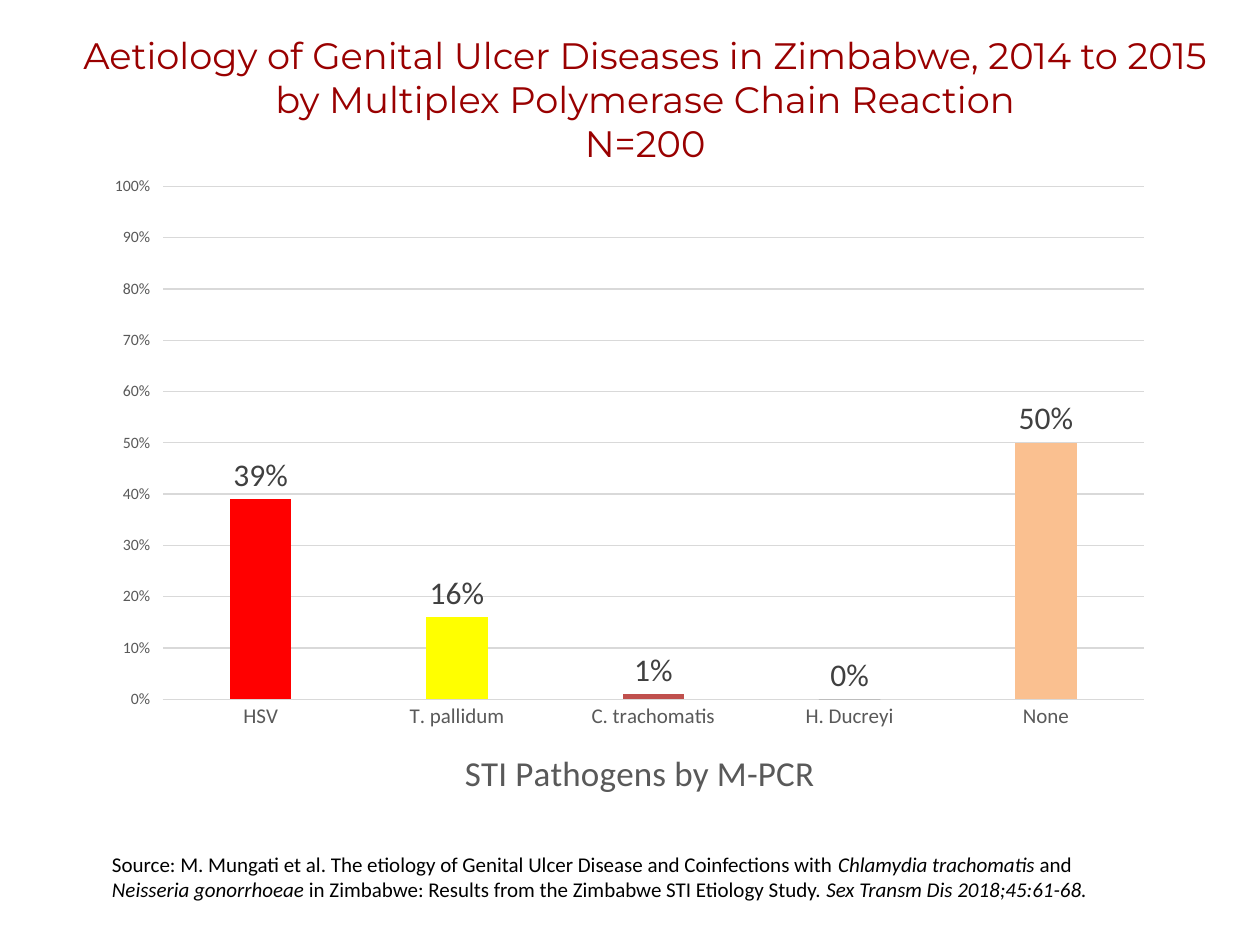
from dataclasses import dataclass

from lxml.etree import SubElement
from pptx import Presentation
from pptx.chart.data import CategoryChartData
from pptx.dml.color import RGBColor
from pptx.enum.chart import XL_CHART_TYPE, XL_LABEL_POSITION, XL_TICK_MARK
from pptx.enum.text import MSO_AUTO_SIZE, PP_ALIGN
from pptx.oxml.ns import qn
from pptx.util import Inches, Pt

BLACK = RGBColor(0x00, 0x00, 0x00)
MAROON = RGBColor(0x99, 0x00, 0x00)
AXIS_GREY = RGBColor(0x59, 0x59, 0x59)
LABEL_GREY = RGBColor(0x40, 0x40, 0x40)
GRID_GREY = RGBColor(0xD9, 0xD9, 0xD9)
RED = RGBColor(0xFF, 0x00, 0x00)
YELLOW = RGBColor(0xFF, 0xFF, 0x00)
BRICK = RGBColor(0xC0, 0x50, 0x4D)
PEACH = RGBColor(0xFA, 0xC0, 0x90)

BODY_FONT = "Calibri"
TITLE_FONT = "Montserrat"


@dataclass(frozen=True)
class Box:
    left: float
    top: float
    width: float
    height: float

    def lengths(self) -> tuple:
        return tuple(Inches(n) for n in (self.left, self.top, self.width, self.height))


@dataclass(frozen=True)
class TextRun:
    text: str
    italic: bool = False


@dataclass(frozen=True)
class Pathogen:
    name: str
    share: float
    color: RGBColor


TITLE_BOX = Box(0.45, 0.21, 9.34, 1.16)
CHART_BOX = Box(0.75, 1.31, 8.5, 5.2)
SOURCE_BOX = Box(0.79, 6.71, 8.38, 0.5)

TITLE = [
    [TextRun("Aetiology of Genital Ulcer Diseases in Zimbabwe, 2014 to 2015 "
             "by Multiplex Polymerase Chain Reaction")],
    [TextRun("N=200")],
]
SOURCE = [[
    TextRun("Source: M. Mungati et al. The etiology of Genital Ulcer Disease and Coinfections with "),
    TextRun("Chlamydia trachomatis", True),
    TextRun(" and "),
    TextRun("Neisseria gonorrhoeae", True),
    TextRun(" in Zimbabwe: Results from the Zimbabwe STI Etiology Study. "),
    TextRun("Sex Transm Dis 2018;45:61-68.", True),
]]
PATHOGENS = [
    Pathogen("HSV", 0.39, RED),
    Pathogen("T. pallidum", 0.16, YELLOW),
    Pathogen("C. trachomatis", 0.01, BRICK),
    Pathogen("H. Ducreyi", 0, BLACK),
    Pathogen("None", 0.5, PEACH),
]


def style_font(font, name: str, size: float, color: RGBColor, italic: bool = False) -> None:
    font.name = name
    font.size = Pt(size)
    font.bold = False
    font.italic = italic
    font.color.rgb = color


def add_text(slide, box: Box, paragraphs: list, font_name: str, size: float,
             color: RGBColor, alignment: PP_ALIGN) -> None:
    frame = slide.shapes.add_textbox(*box.lengths()).text_frame
    frame.word_wrap = True
    frame.auto_size = MSO_AUTO_SIZE.SHAPE_TO_FIT_TEXT
    for index, text_runs in enumerate(paragraphs):
        paragraph = frame.add_paragraph() if index else frame.paragraphs[0]
        paragraph.alignment = alignment
        for text_run in text_runs:
            run = paragraph.add_run()
            run.text = text_run.text
            style_font(run.font, font_name, size, color, text_run.italic)


def place(element, position: int, **settings) -> None:
    for old_layout in element.findall(qn("c:layout")):
        element.remove(old_layout)
    layout = SubElement(element, qn("c:layout"))
    element.insert(position, layout)
    manual = SubElement(layout, qn("c:manualLayout"))
    for tag, value in settings.items():
        SubElement(manual, qn(f"c:{tag}")).set("val", str(value))


def style_category_axis(axis) -> None:
    axis.major_tick_mark = XL_TICK_MARK.NONE
    axis.format.line.color.rgb = GRID_GREY
    axis.format.line.width = Pt(0.75)
    style_font(axis.tick_labels.font, BODY_FONT, 12, AXIS_GREY)
    run = axis.axis_title.text_frame.paragraphs[0].add_run()
    run.text = "STI Pathogens by M-PCR"
    style_font(run.font, BODY_FONT, 20, AXIS_GREY)
    place(axis.axis_title._element, 1, xMode="edge", yMode="edge", x=0.34, y=0.88)


def style_value_axis(axis) -> None:
    axis.minimum_scale = 0
    axis.maximum_scale = 1
    axis.major_unit = 0.1
    axis.major_tick_mark = XL_TICK_MARK.OUTSIDE
    axis.format.line.fill.background()
    axis.major_gridlines.format.line.color.rgb = GRID_GREY
    axis.major_gridlines.format.line.width = Pt(0.75)
    axis.tick_labels.number_format = "0%"
    axis.tick_labels.number_format_is_linked = False
    style_font(axis.tick_labels.font, BODY_FONT, 9, AXIS_GREY)


def add_pathogen_chart(slide) -> None:
    data = CategoryChartData(number_format="0%")
    data.categories = [pathogen.name for pathogen in PATHOGENS]
    data.add_series("Series 1", [pathogen.share for pathogen in PATHOGENS])
    chart = slide.shapes.add_chart(
        XL_CHART_TYPE.COLUMN_CLUSTERED, *CHART_BOX.lengths(), data).chart
    chart.has_legend = False
    chart.has_title = False
    style_font(chart.font, BODY_FONT, 10, BLACK)
    style_category_axis(chart.category_axis)
    style_value_axis(chart.value_axis)

    plot = chart.plots[0]
    plot.gap_width = 219
    plot.overlap = -27
    plot.vary_by_categories = False
    series = plot.series[0]
    series.format.fill.solid()
    series.format.fill.fore_color.rgb = BRICK
    for index, pathogen in enumerate(PATHOGENS):
        fill = series.points[index].format.fill
        fill.solid()
        fill.fore_color.rgb = pathogen.color

    labels = series.data_labels
    labels.show_value = True
    labels.position = XL_LABEL_POSITION.OUTSIDE_END
    labels.number_format = "0%"
    labels.number_format_is_linked = False
    style_font(labels.font, BODY_FONT, 18, LABEL_GREY)

    plot_area = chart._chartSpace.find(f".//{qn('c:plotArea')}")
    place(plot_area, 0, layoutTarget="inner", xMode="edge", yMode="edge",
          x=0.54 / CHART_BOX.width, y=0.17 / CHART_BOX.height,
          w=7.79 / CHART_BOX.width, h=4.07 / CHART_BOX.height)


def main() -> None:
    presentation = Presentation()
    presentation.slide_width = Inches(10)
    presentation.slide_height = Inches(7.5)
    slide = presentation.slides.add_slide(presentation.slide_layouts[6])
    add_text(slide, SOURCE_BOX, SOURCE, BODY_FONT, 12, BLACK, PP_ALIGN.LEFT)
    add_text(slide, TITLE_BOX, TITLE, TITLE_FONT, 21, MAROON, PP_ALIGN.CENTER)
    add_pathogen_chart(slide)
    presentation.save("out.pptx")


if __name__ == "__main__":
    main()
